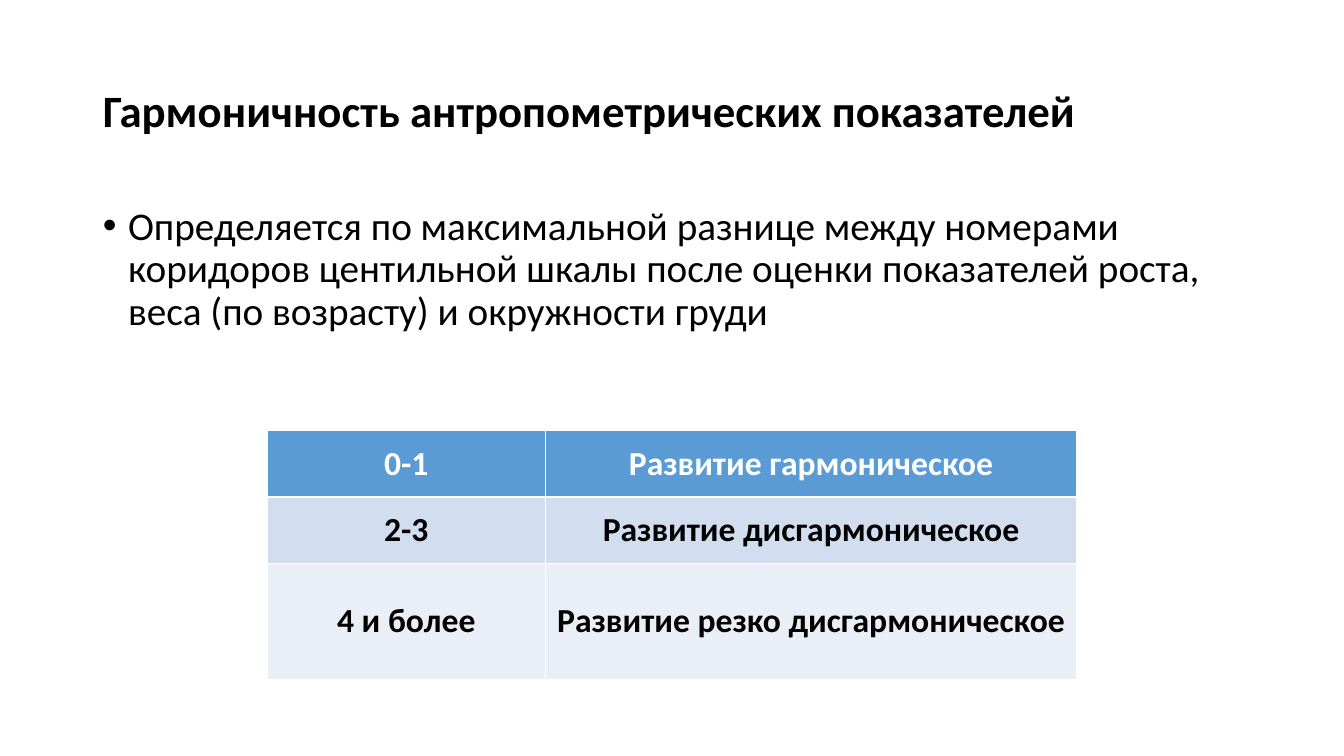
from pptx import Presentation
from pptx import util as u
from pptx.dml.color import RGBColor
from pptx.enum import text

PX = 9144  # 100 px to the inch
FONT = "Calibri"
BLACK, WHITE = "000000", "FFFFFF"
ROWS = [
    # height, fill, font colour, corridor difference, conclusion
    (66, "5B9BD5", WHITE, "0-1", "Развитие гармоническое"),
    (66, "D2DEEF", BLACK, "2-3", "Развитие дисгармоническое"),
    (115, "EAEFF7", BLACK, "4 и более", "Развитие резко дисгармоническое"),
]
COLUMN_WIDTHS = (276, 527)


def px(length):
    return u.Emu(length * PX)


def color(hex_string):
    return RGBColor.from_string(hex_string)


def set_all(target, values):
    """Set every attribute named in the dict of format values."""
    for name, value in values.items():
        setattr(target, name, value)


def format_font(paragraph, size, font_color, bold):
    set_all(paragraph.font, {"name": FONT, "size": u.Pt(size), "bold": bold})
    paragraph.font.color.rgb = color(font_color)


def fill_placeholder(shape, box, words, anchor):
    """Move a placeholder into the box and return its only paragraph."""
    set_all(shape, dict(zip(("left", "top", "width", "height"), map(px, box))))
    frame = shape.text_frame
    frame.text = words
    set_all(frame, {"word_wrap": True, "auto_size": text.MSO_AUTO_SIZE.NONE,
                    "vertical_anchor": anchor})
    paragraph = frame.paragraphs[0]
    set_all(paragraph, {"alignment": text.PP_ALIGN.LEFT, "line_spacing": 0.9,
                        "space_before": u.Pt(0)})
    return paragraph


def add_title(slide, box):
    paragraph = fill_placeholder(
        slide.shapes.title, box, "Гармоничность антропометрических показателей",
        text.MSO_ANCHOR.MIDDLE)
    format_font(paragraph, 32, BLACK, True)


def add_body(slide, box):
    paragraph = fill_placeholder(
        slide.placeholders[1], box,
        "Определяется по максимальной разнице между номерами коридоров "
        "центильной шкалы после оценки показателей роста, веса (по возрасту) "
        "и окружности груди", text.MSO_ANCHOR.TOP)
    properties = paragraph._p.get_or_add_pPr()
    properties.set("marL", str(px(25)))
    properties.set("indent", str(px(-25)))
    format_font(paragraph, 28, BLACK, False)


def add_harmony_table(slide, left, top):
    height = sum(row[0] for row in ROWS)
    table = slide.shapes.add_table(
        len(ROWS), len(COLUMN_WIDTHS), px(left), px(top),
        px(sum(COLUMN_WIDTHS)), px(height)).table
    for column, width in zip(table.columns, COLUMN_WIDTHS):
        column.width = px(width)
    for row, (height, fill, font_color, *words) in zip(table.rows, ROWS):
        row.height = px(height)
        for cell, label in zip(row.cells, words):
            cell.text = label
            cell.vertical_anchor = text.MSO_ANCHOR.MIDDLE
            cell.fill.solid()
            cell.fill.fore_color.rgb = color(fill)
            paragraph = cell.text_frame.paragraphs[0]
            paragraph.alignment = text.PP_ALIGN.CENTER
            format_font(paragraph, 24, font_color, True)


def main():
    presentation = Presentation()
    set_all(presentation, {"slide_width": u.Inches(13.33),
                           "slide_height": u.Inches(7.5)})
    slide = presentation.slides.add_slide(presentation.slide_layouts[1])
    add_title(slide, (92, 40, 1150, 145))
    add_body(slide, (92, 200, 1150, 476))
    add_harmony_table(slide, 265, 427)
    presentation.save("out.pptx")


if __name__ == "__main__":
    main()
